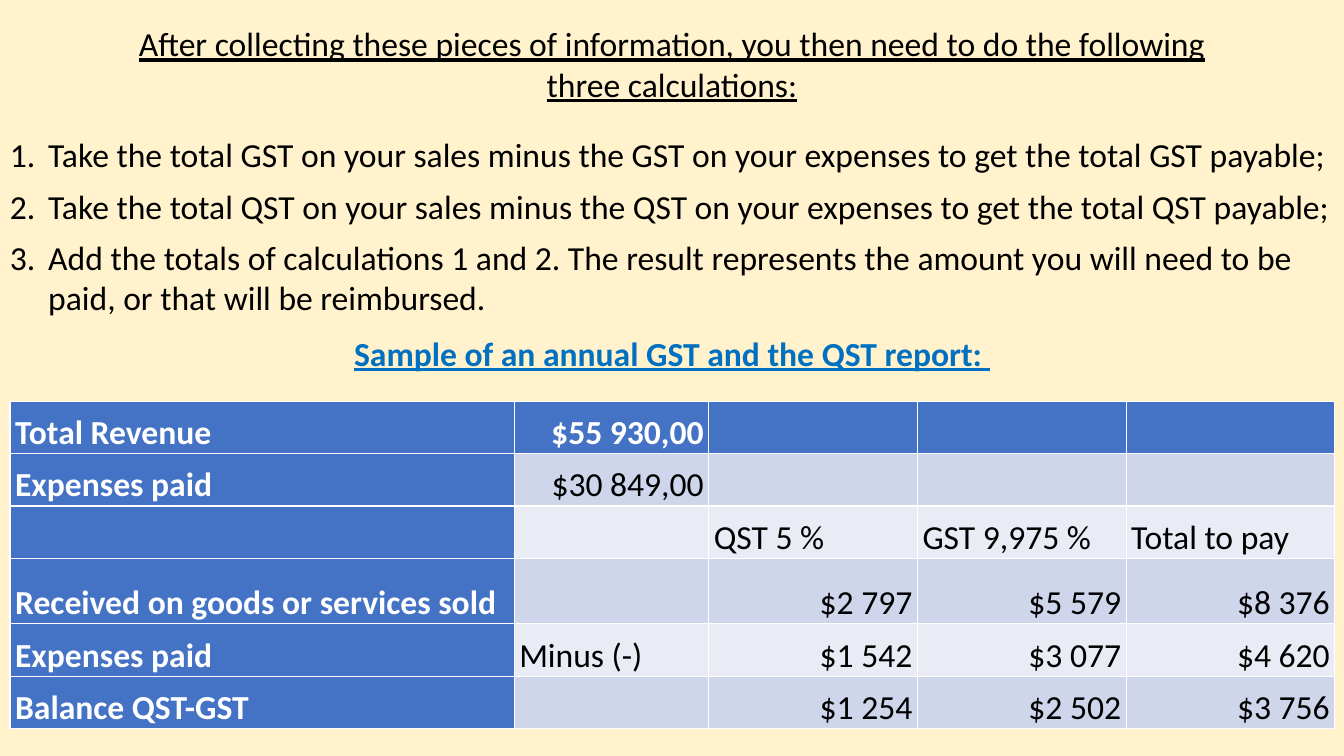
"""Build the slide on GST and QST calculations with its sample report."""
from lxml.etree import SubElement
from pptx import Presentation
from pptx.dml.color import RGBColor
from pptx.enum.text import MSO_ANCHOR as Anchor, MSO_AUTO_SIZE as Auto, PP_ALIGN as Align
from pptx.oxml.ns import qn
from pptx.util import Inches, Pt


def paint(target, color):
    target.fill.solid()
    target.fill.fore_color.rgb = RGBColor.from_string(color)


def write(frame, lines, color="000000", bold=False, line=False, align=Align.LEFT):
    frame.word_wrap = True
    frame.text = "\n".join(lines)
    for para in frame.paragraphs:
        para.alignment = align
        for run in para.runs:
            font = run.font
            font.name, font.size = "Calibri", Pt(24)
            font.bold, font.underline = bold, line
            paint(font, color)


deck = Presentation()
deck.slide_width, deck.slide_height = Inches(13.33), Inches(7.5)
slide = deck.slides.add_slide(deck.slide_layouts[6])
paint(slide.background, "FFF2CC")
shapes = slide.shapes

intro = shapes.add_textbox(Inches(1.08), Inches(0.18), Inches(11.17), Inches(0.91)).text_frame
write(intro, ["After collecting these pieces of information, you then need to do the following "
              "three calculations:"], line=True, align=Align.CENTER)
intro.paragraphs[0].space_after = Pt(8)

steps = shapes.add_textbox(0, Inches(1.28), Inches(13.48), Inches(1.94)).text_frame
write(steps, [
    "Take the total GST on your sales minus the GST on your expenses to get the total GST payable;",
    "Take the total QST on your sales minus the QST on your expenses to get the total QST payable;",
    "Add the totals of calculations 1 and 2. The result represents the amount you will need to be "
    "paid, or that will be reimbursed.",
])
for para in steps.paragraphs:
    para.space_after = Pt(8)
    props = para._p.get_or_add_pPr()
    props.set("marL", str(Inches(0.38)))
    props.set("indent", str(-Inches(0.38)))
    SubElement(props, qn("a:buAutoNum"), type="arabicPeriod")

title = shapes.add_textbox(Inches(3.22), Inches(3.25), Inches(6.89), Inches(0.5)).text_frame
write(title, ["Sample of an annual GST and the QST report: "], "0070C0", True, True, Align.CENTER)
for frame in (intro, steps, title):
    frame.auto_size = Auto.SHAPE_TO_FIT_TEXT

report = [
    ["Total Revenue", "$55 930,00", "", "", ""],
    ["Expenses paid", "$30 849,00", "", "", ""],
    ["", "", "QST 5 %", "GST 9,975 %", "Total to pay"],
    ["Received on goods or services sold", "", "$2 797", "$5 579", "$8 376"],
    ["Expenses paid", "Minus (-)", "$1 542", "$3 077", "$4 620"],
    ["Balance QST-GST", "", "$1 254", "$2 502", "$3 756"],
]
widths = [5, 1.93, 2.07, 2.07, 2.07]
heights = [0.52, 0.52, 0.52, 0.65, 0.52, 0.52]
table = shapes.add_table(6, 5, Inches(0.1), Inches(3.98), Inches(13.12), Inches(3.27)).table
table.first_col = True
for col, width in zip(table.columns, widths):
    col.width = Inches(width)
for r, (row, height) in enumerate(zip(report, heights)):
    table.rows[r].height = Inches(height)
    for c, text in enumerate(row):
        cell = table.cell(r, c)
        head = r == 0 or c == 0
        paint(cell, "4472C4" if head else "CFD5EA" if r % 2 else "E9EBF5")
        cell.vertical_anchor = Anchor.BOTTOM
        cell.margin_left = cell.margin_right = Inches(0.05)
        cell.margin_top = cell.margin_bottom = 0
        if text:
            side = Align.RIGHT if text.startswith("$") else Align.LEFT
            write(cell.text_frame, [text], "FFFFFF" if head else "000000", head, align=side)
            cell.text_frame.paragraphs[0].line_spacing = 1.25

deck.save("out.pptx")
